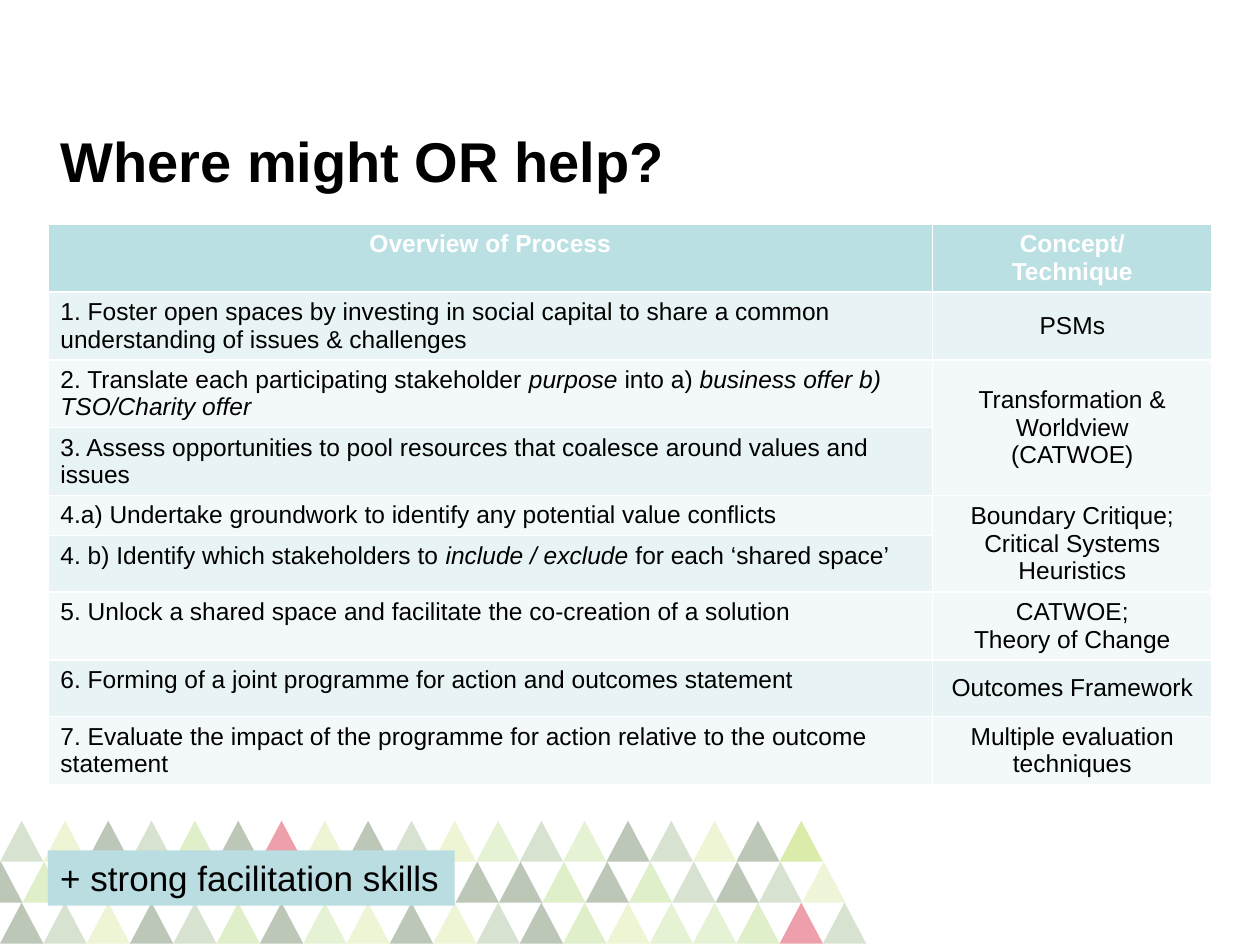
import pptx
import pptx.dml.color
import pptx.enum.shapes
import pptx.enum.text
import pptx.oxml.ns
import pptx.util
import lxml.etree

HUES = {
    "text": "000000", "head": "BBE0E3", "white": "FFFFFF",
    "odd": "E7F3F4", "even": "F3F9FA", "note": "BADDE1",
    "dark": "264715", "moss": "4A812C", "leaf": "81C12C",
    "lime": "A7CD28", "red": "D3122E",
}
TINTS = {
    "D": ("dark", 30), "M": ("moss", 22), "G": ("leaf", 25), "g": ("leaf", 20),
    "Y": ("lime", 20), "y": ("lime", 18), "L": ("lime", 40), "R": ("red", 40),
}
BANDS = [
    (0, "MYDMGDRYDMYgMgDMYDL"),
    (-0.48, "DG........GDDGDGMDMy"),
    (0, "DMYDMGDgYDYMDGYggGRM"),
]
ROWS = [
    (0.45, "Overview of Process", "Concept/\nTechnique", 1),
    (0.45, "1. Foster open spaces by investing in social capital to share a common "
           "understanding of issues & challenges", "PSMs", 1),
    (0.45, "2. Translate each participating stakeholder *purpose* into a) "
           "*business offer b) TSO/Charity offer*",
     "Transformation &\nWorldview\n(CATWOE)", 2),
    (0.45, "3. Assess opportunities to pool resources that coalesce around "
           "values and issues", "", 1),
    (0.31, "4.a) Undertake groundwork to identify any potential value conflicts",
     "Boundary Critique;\nCritical Systems Heuristics", 2),
    (0.45, "4. b) Identify which stakeholders to *include / exclude* "
           "for each ‘shared space’", "", 1),
    (0.45, "5. Unlock a shared space and facilitate the co-creation of a solution",
     "CATWOE;\nTheory of Change", 1),
    (0.45, "6. Forming of a joint programme for action and outcomes statement",
     "Outcomes Framework", 1),
    (0.45, "7. Evaluate the impact of the programme for action relative to the "
           "outcome statement", "Multiple evaluation techniques", 1),
]
WIDTH, HEIGHT = pptx.util.Inches(10), pptx.util.Inches(7.5)
ALIGN = pptx.enum.text.PP_ALIGN
ANCHOR = pptx.enum.text.MSO_ANCHOR
SHAPE = pptx.enum.shapes.MSO_SHAPE


def hue(name):
    return pptx.dml.color.RGBColor.from_string(HUES[name])


def share(left, top, wide, high):
    return [int(size * part / 100) for size, part in
            zip((WIDTH, HEIGHT, WIDTH, HEIGHT), (left, top, wide, high))]


def apply(item, values):
    for name, value in values.items():
        setattr(item, name, value)


def write(frame, text, size, align=ALIGN.LEFT, tone="text", bold=False):
    for num, line in enumerate(text.split("\n")):
        para = frame.add_paragraph() if num else frame.paragraphs[0]
        para.alignment = align
        for turn, part in enumerate(line.split("*")):
            if part:
                run = para.add_run()
                run.text = part
                apply(run.font, {"name": "Arial", "size": pptx.util.Pt(size),
                                 "bold": bold, "italic": turn % 2 == 1})
                run.font.color.rgb = hue(tone)


def paint(slide, kind, box, tone, alpha=100):
    shape = slide.shapes.add_shape(kind, *box)
    shape.shadow.inherit = False
    shape.fill.solid()
    shape.fill.fore_color.rgb = hue(tone)
    shape.line.fill.background()
    if alpha < 100:
        tag = pptx.oxml.ns.qn("a:srgbClr")
        node = next(shape._element.spPr.iter(tag))
        lxml.etree.SubElement(node, pptx.oxml.ns.qn("a:alpha"), val=str(alpha * 1000))
    return shape


def tile(slide, box):
    left, top, wide, high = box
    step, rise = wide / 20, high / len(BANDS)
    for row, (shift, codes) in enumerate(BANDS):
        for col, code in enumerate(codes):
            if code in TINTS:
                spot = (left + (col + shift) * step, top + row * rise, step, rise)
                paint(slide, SHAPE.ISOSCELES_TRIANGLE, map(int, spot), *TINTS[code])


def head(slide, box):
    title = slide.shapes.title
    apply(title, dict(zip(("left", "top", "width", "height"), box)))
    title.text_frame.vertical_anchor = ANCHOR.MIDDLE
    write(title.text_frame, "Where might OR help?", 32, bold=True)


def grid(slide, box):
    table = slide.shapes.add_table(len(ROWS), 2, *box).table
    for col, part in zip(table.columns, (0.76, 0.24)):
        col.width = int(box[2] * part)
    for row, (high, step, tool, span) in enumerate(ROWS):
        table.rows[row].height = pptx.util.Inches(high)
        if span > 1:
            table.cell(row, 1).merge(table.cell(row + span - 1, 1))
        tone = "head" if row == 0 else "odd" if row % 2 else "even"
        for col, text in enumerate((step, tool)):
            cell = table.cell(row, col)
            cell.fill.solid()
            cell.fill.fore_color.rgb = hue("even" if cell.is_spanned else tone)
            cell.vertical_anchor = ANCHOR.MIDDLE if row and col else ANCHOR.TOP
            if text:
                write(cell.text_frame, text, 14,
                      ALIGN.LEFT if row and not col else ALIGN.CENTER,
                      "text" if row else "white", row == 0)


def note(slide, box):
    frame = paint(slide, SHAPE.RECTANGLE, box, "note").text_frame
    apply(frame, {"word_wrap": False, "vertical_anchor": ANCHOR.TOP,
                  "auto_size": pptx.enum.text.MSO_AUTO_SIZE.SHAPE_TO_FIT_TEXT})
    write(frame, "+ strong facilitation skills", 20)


def main():
    deck = pptx.Presentation()
    apply(deck, {"slide_width": WIDTH, "slide_height": HEIGHT})
    slide = deck.slides.add_slide(deck.slide_layouts[5])
    tile(slide, share(0, 86.85, 68.75, 13))
    head(slide, share(3.8, 11.87, 92.4, 10.13))
    grid(slide, share(3.8, 23.75, 92.4, 52.13))
    note(slide, share(3.8, 90, 32.3, 5.85))
    deck.save("out.pptx")


if __name__ == "__main__":
    main()
